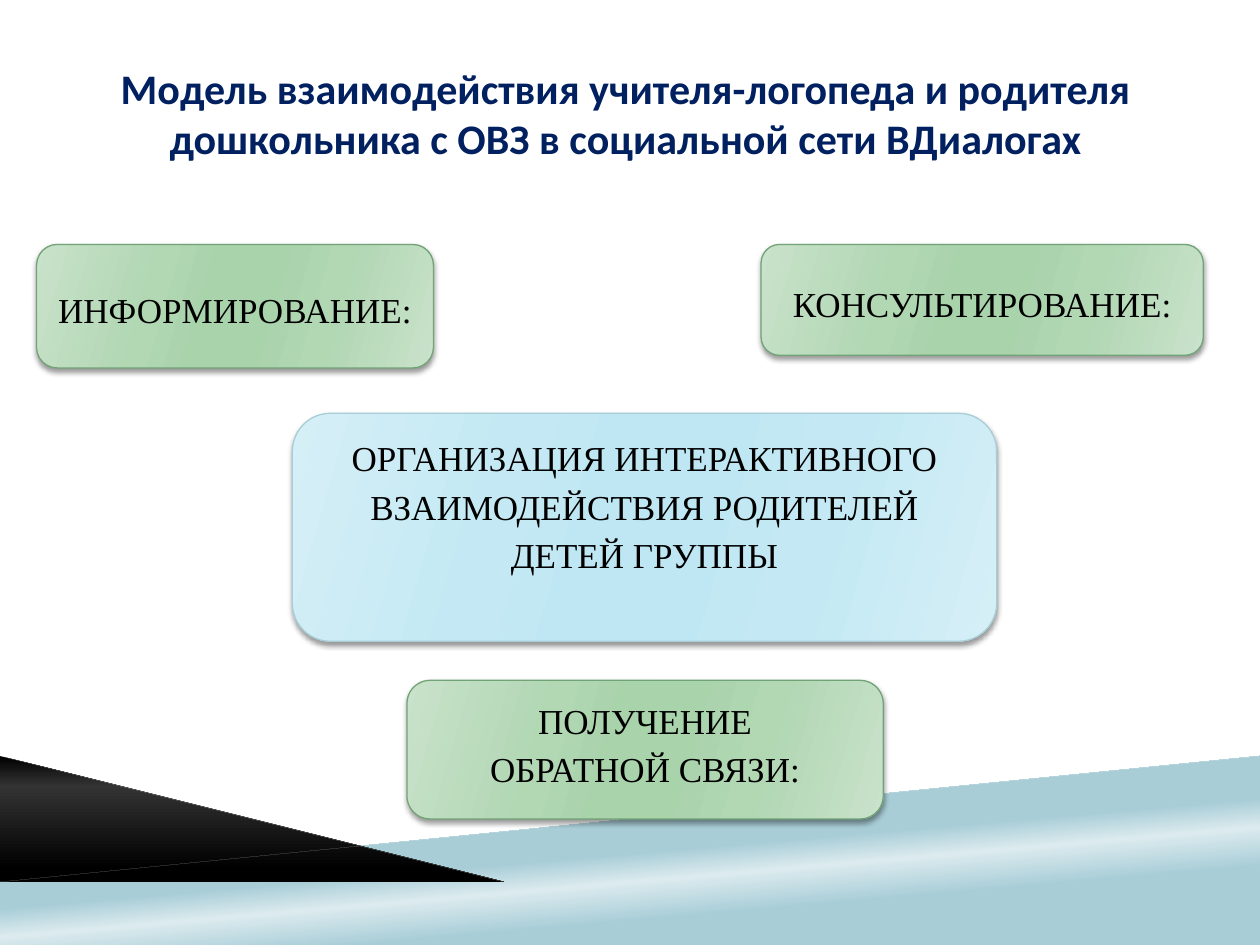
import pptx
import pptx.dml.color
import pptx.enum.shapes
import pptx.enum.text
import pptx.oxml
import pptx.oxml.ns
import pptx.util
from lxml import etree

WIDTH, HEIGHT = 10, 7.5
COLORS = {
    "title": "002060", "text": "000000", "white": "FFFFFF",
    "green_line": "72A376", "blue_line": "A8CDD7", "shadow": "000000",
}


def symmetric_stops(edge, between, middle):
    return [(0, edge), (30, between), (45, middle),
            (55, middle), (73, between), (100, edge)]


GRADIENTS = {
    "green": symmetric_stops("C9E2CB", "B1D7B3", "A8D3AB"),
    "blue": symmetric_stops("D5EFF6", "C4E9F4", "BEE7F3"),
    "band": [(39, "A8CDD7"), (50, "DCEBEF"), (58, "A8CDD7")],
    "wedge": [(0, "000000"), (24, "333333"), (90, "000000")],
}


def rgb(name):
    return pptx.dml.color.RGBColor.from_string(COLORS[name])


def add_element(parent, tag, **attributes):
    element = etree.SubElement(parent, pptx.oxml.ns.qn(tag))
    for key, value in attributes.items():
        element.set(key, str(value))
    return element


def fill_gradient(shape, name, clockwise_angle):
    shape.fill.gradient()
    shape.fill.gradient_angle = 360 - clockwise_angle
    stop_list = shape._element.spPr.find(".//" + pptx.oxml.ns.qn("a:gsLst"))
    for stop in list(stop_list):
        stop_list.remove(stop)
    for position, color in GRADIENTS[name]:
        stop = add_element(stop_list, "a:gs", pos=position * 1000)
        add_element(stop, "a:srgbClr", val=color)


def add_shadow(shape):
    shape.shadow.inherit = False
    effects = shape._element.spPr.find(pptx.oxml.ns.qn("a:effectLst"))
    shadow = add_element(effects, "a:outerShdw", blurRad=pptx.util.Pt(3),
                         dist=pptx.util.Pt(2), dir=90 * 60000, rotWithShape=0)
    color = add_element(shadow, "a:srgbClr", val=COLORS["shadow"])
    add_element(color, "a:alpha", val=40000)


def add_polygon(slide, points, gradient=None, angle=0):
    """Draw a borderless outline, white unless a gradient is named."""
    builder = slide.shapes.build_freeform(*points[0], scale=pptx.util.Inches(1))
    builder.add_line_segments(points[1:], close=True)
    shape = builder.convert_to_shape()
    shape.shadow.inherit = False
    shape.line.fill.background()
    if gradient:
        fill_gradient(shape, gradient, angle)
    else:
        shape.fill.solid()
        shape.fill.fore_color.rgb = rgb("white")


def format_text(frame, text, size, font_name, color, anchor, spacing=None, bold=False):
    frame.text = text
    frame.word_wrap = True
    frame.vertical_anchor = anchor
    for paragraph in frame.paragraphs:
        paragraph.alignment = pptx.enum.text.PP_ALIGN.CENTER
        paragraph.line_spacing = spacing
        paragraph.font.size = pptx.util.Pt(size)
        paragraph.font.name = font_name
        paragraph.font.bold = bold
        paragraph.font.color.rgb = rgb(color)


def add_title(slide, text):
    title = slide.shapes.title
    title.left, title.top, title.width, title.height = map(
        pptx.util.Inches, (0.28, 0.44, 9.37, 0.91))
    format_text(title.text_frame, text, 24, "Calibri", "title",
                pptx.enum.text.MSO_ANCHOR.MIDDLE, bold=True)


def add_card(slide, text, box, palette, anchor):
    card = slide.shapes.add_shape(
        pptx.enum.shapes.MSO_SHAPE.ROUNDED_RECTANGLE, *map(pptx.util.Inches, box))
    fill_gradient(card, palette, 16)
    card.line.color.rgb = rgb(palette + "_line")
    card.line.width = pptx.util.Pt(0.75)
    add_shadow(card)
    format_text(card.text_frame, text, 20, "Times New Roman", "text", anchor, 1.15)


def add_decoration(slide):
    add_polygon(slide, [(0, 7.21), (WIDTH, 6.27), (WIDTH, HEIGHT), (0, HEIGHT)],
                "band", 265)
    add_polygon(slide, [(0, 5.89), (3.59, 6.85), (0, 7.21)], "wedge", 90)
    # White edges along the band and the wedge
    add_polygon(slide, [(WIDTH, 6.23), (0, 7.17), (0, 7.25), (WIDTH, 6.31)])
    add_polygon(slide, [(0, 5.85), (0, 5.93), (3.5, 6.88), (3.75, 6.86)])


def main():
    presentation = pptx.Presentation()
    presentation.slide_width = pptx.util.Inches(WIDTH)
    presentation.slide_height = pptx.util.Inches(HEIGHT)
    slide = presentation.slides.add_slide(presentation.slide_layouts[5])

    add_decoration(slide)
    add_title(slide, "Модель взаимодействия учителя-логопеда и родителя "
                     "дошкольника с ОВЗ в социальной сети ВДиалогах")

    # Parts of the interaction model
    middle = pptx.enum.text.MSO_ANCHOR.MIDDLE
    top = pptx.enum.text.MSO_ANCHOR.TOP
    add_card(slide, "ИНФОРМИРОВАНИЕ:", (0.29, 1.94, 3.15, 0.98), "green", middle)
    add_card(slide, "КОНСУЛЬТИРОВАНИЕ:", (6.04, 1.94, 3.51, 0.88), "green", middle)
    add_card(slide, "ОРГАНИЗАЦИЯ ИНТЕРАКТИВНОГО ВЗАИМОДЕЙСТВИЯ РОДИТЕЛЕЙ ДЕТЕЙ ГРУППЫ",
             (2.32, 3.28, 5.59, 1.81), "blue", top)
    add_card(slide, "ПОЛУЧЕНИЕ\nОБРАТНОЙ СВЯЗИ:", (3.23, 5.4, 3.78, 1.1), "green", top)

    presentation.save("out.pptx")


if __name__ == "__main__":
    main()
